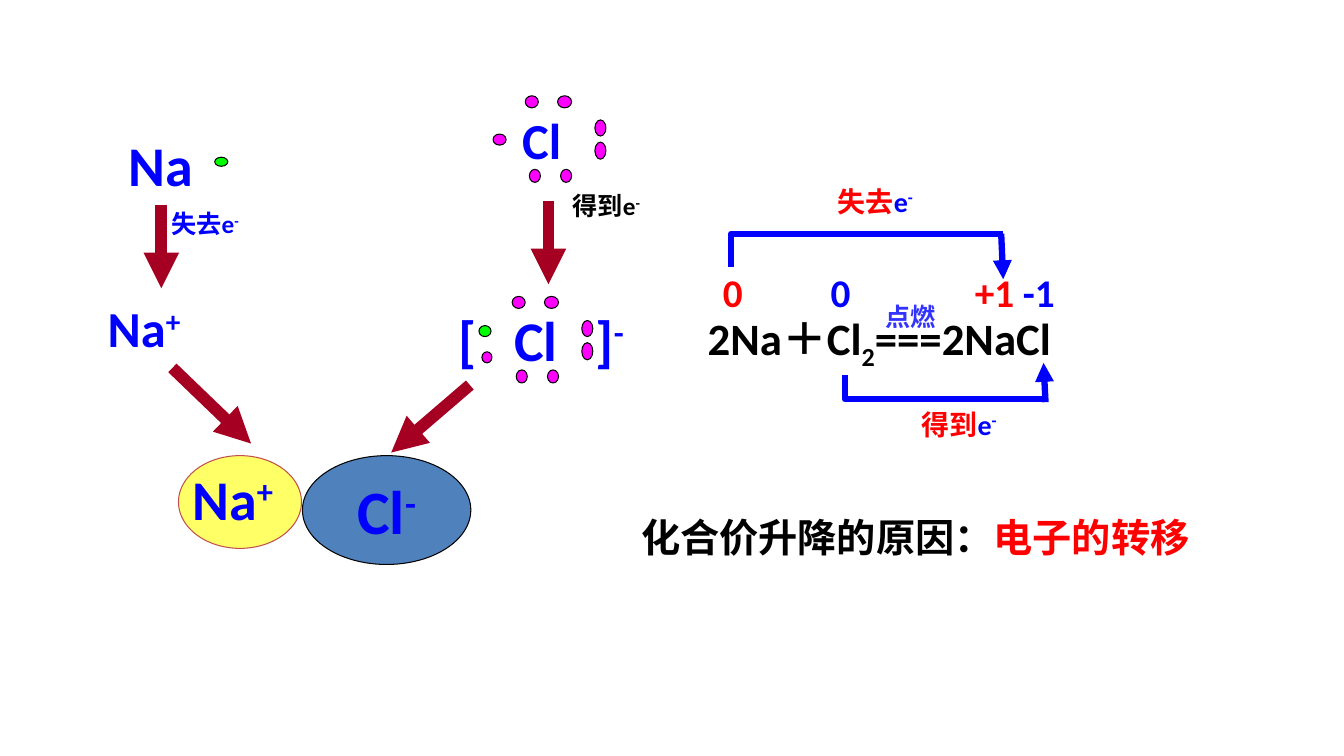
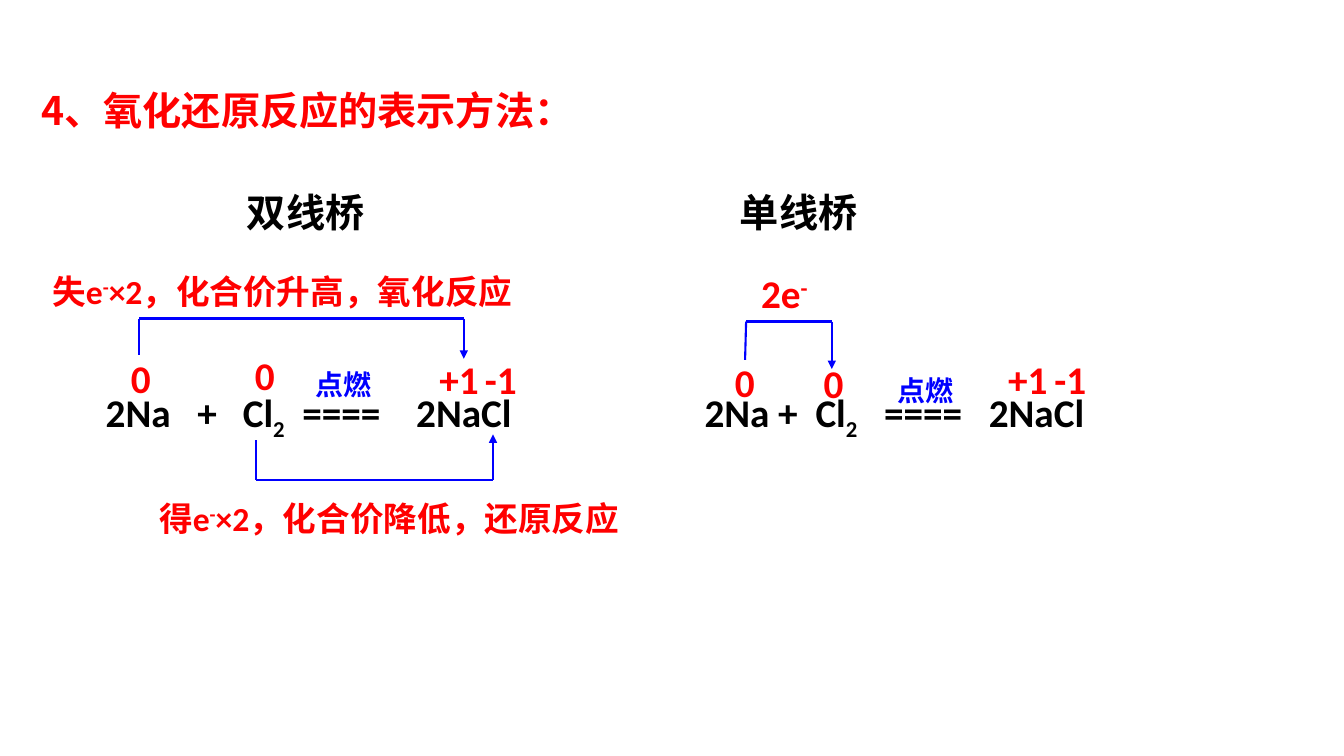
from itertools import pairwise

from lxml import etree
from pptx import Presentation
from pptx.dml.color import RGBColor
from pptx.enum.shapes import MSO_CONNECTOR as Connector, MSO_SHAPE as Shape
from pptx.enum.text import MSO_ANCHOR as Anchor, MSO_AUTO_SIZE as AutoSize, PP_ALIGN as Align
from pptx.oxml.ns import qn
from pptx.util import Pt

PX = 9144
LATIN, HAN = "Calibri", "Noto Sans CJK SC"
RED, BLUE, BLACK = "FF0000", "0000FF", "000000"
MAGENTA, GREEN, CRIMSON = "FF00FF", "00FF00", "A50021"
SUPER, SUB = 30000, -25000
OUTER_ELECTRONS = [
    (0, 0, 13, 12), (32, 0, 14, 12), (69, 24, 11, 16),
    (69, 46, 11, 17), (35, 73, 11, 13), (4, 73, 11, 13),
]


def px(*lengths):
    """Turn pixel lengths into EMU."""
    return [length * PX for length in lengths]


def paint(target, color):
    """Give a fill or a font one solid hex colour."""
    if hasattr(target, "solid"):
        target.solid()
        target.fore_color.rgb = RGBColor.from_string(color)
    else:
        target.color.rgb = RGBColor.from_string(color)


def write(frame, parts, size, color, align=Align.LEFT, font=LATIN):
    """Write bold runs given as text, or as (text, colour, baseline)."""
    paragraph = frame.paragraphs[0]
    paragraph.alignment = align
    for part in [parts] if isinstance(parts, str) else parts:
        wording, tint, baseline = (part, color, 0) if isinstance(part, str) else part
        run = paragraph.add_run()
        run.text = wording
        run.font.size, run.font.bold, run.font.name = Pt(size), True, font
        paint(run.font, tint or color)
        properties = run._r.get_or_add_rPr()
        etree.SubElement(properties, qn("a:ea")).set("typeface", HAN)
        if baseline:
            properties.set("baseline", str(baseline))


def label(slide, x, y, parts, size=28, color=RED):
    """Place a label whose box is wide enough for its text."""
    length = sum(len(part if isinstance(part, str) else part[0]) for part in parts)
    width, height = round(length * size * 1.4) + 20, round(size * 1.7) + 10
    frame = slide.shapes.add_textbox(*px(x, y, width, height)).text_frame
    frame.word_wrap = True
    write(frame, parts, size, color)


def heading(slide, x, y, width, parts, color):
    """Move the title placeholder and fill it."""
    title = slide.shapes.title
    title.left, title.top, title.width, title.height = px(x, y, width, 57)
    frame = title.text_frame
    frame.auto_size, frame.vertical_anchor = AutoSize.NONE, Anchor.TOP
    write(frame, parts, 28, color, font=HAN)


def oval(slide, x, y, width, height, fill, outline=BLACK):
    """Draw a thinly outlined ellipse."""
    ellipse = slide.shapes.add_shape(Shape.OVAL, *px(x, y, width, height))
    ellipse.shadow.inherit = False
    paint(ellipse.fill, fill)
    paint(ellipse.line.fill, outline)
    ellipse.line.width = Pt(0.75)
    return ellipse


def electrons(slide, x, y):
    """Draw the six outer electrons that both chlorine symbols share."""
    for dx, dy, width, height in OUTER_ELECTRONS:
        oval(slide, x + dx, y + dy, width, height, MAGENTA)


def stroke(slide, start, end, color=CRIMSON, width=8.5, head=True):
    """Draw a straight line, with an arrowhead unless told otherwise."""
    connector = slide.shapes.add_connector(Connector.STRAIGHT, *px(*start, *end))
    paint(connector.line.fill, color)
    connector.line.width = Pt(width)
    if head:
        etree.SubElement(connector.line._get_or_add_ln(), qn("a:tailEnd")).set("type", "triangle")
    etree.SubElement(connector._element.spPr, qn("a:effectLst"))


def thin_bridge(slide, *corners):
    """Join the corners by thin lines, the last one an arrow."""
    for start, end in pairwise(corners):
        stroke(slide, start, end, BLUE, 1.5, end == corners[-1])


def thick_bridge(slide, elbow, shaft):
    """Draw a thick open elbow and the arrow that leaves its end."""
    builder = slide.shapes.build_freeform(*elbow[0], scale=PX)
    builder.add_line_segments(elbow[1:], close=False)
    outline = builder.convert_to_shape()
    outline.shadow.inherit = False
    outline.fill.background()
    paint(outline.line.fill, BLUE)
    outline.line.width = Pt(4.5)
    stroke(slide, *shaft, BLUE, 4.5)


def equation(slide, starts):
    """Set the terms of the reaction on one line at the given starts."""
    terms = ["2Na", "+", ["Cl", ("2", None, SUB)], "====", "2NaCl"]
    for x, term in zip(starts, terms):
        label(slide, x, 380, term, color=BLACK)


def charge(sign, color=None):
    """Return a raised charge sign."""
    return (sign, color, SUPER)


def ion_formation(slide):
    """Show sodium and chlorine turning into ions that attract."""
    label(slide, 118, 125, "Na", 40, BLUE)
    oval(slide, 213, 156, 13, 9, GREEN)
    stroke(slide, (160, 203), (160, 286))
    label(slide, 160, 202, ["失去e", charge("-")], 18, BLUE)
    label(slide, 97, 290, ["Na", charge("+")], 36, BLUE)
    stroke(slide, (171, 365), (249, 440))

    label(slide, 508, 103, "Cl", 36, BLUE)
    electrons(slide, 521, 95)
    oval(slide, 489, 133, 13, 11, MAGENTA)
    stroke(slide, (544, 199), (544, 282))
    label(slide, 558, 184, ["得到e", charge("-")], 18, BLACK)
    for x, symbol in [(445, "["), (500, "Cl"), (581, ["]", charge("-")])]:
        label(slide, x, 298, symbol, 40, BLUE)
    electrons(slide, 508, 294)
    oval(slide, 478, 349, 10, 11, MAGENTA)
    oval(slide, 475, 323, 12, 11, GREEN)
    stroke(slide, (466, 382), (388, 449))

    chloride = oval(slide, 300, 452, 167, 108, "4F81BD").text_frame
    chloride.word_wrap, chloride.vertical_anchor = False, Anchor.MIDDLE
    write(chloride, ["Cl", charge("-")], 44, BLUE, Align.CENTER)
    oval(slide, 177, 452, 122, 92, "FFFF66", "C0504D")
    label(slide, 181, 456, ["Na", charge("+")], 40, BLUE)


def valence_change(slide):
    """Show which valences rise and fall in the reaction."""
    for x, y, change in [(821, 178, "失去"), (904, 399, "得到")]:
        label(slide, x, y, [change, ("e", BLUE, 0), charge("-", BLUE)], 20)
    thick_bridge(slide, [(725, 265), (725, 232), (995, 232)], [(993, 232), (995, 277)])
    thick_bridge(slide, [(838, 372), (838, 396), (1037, 396)], [(1037, 399), (1035, 360)])
    label(slide, 707, 261, "0")
    label(slide, 814, 261, "0", color=BLUE)
    label(slide, 957, 261, ["+1 ", ("-1", BLUE, 0)])
    label(slide, 692, 303, ["2Na＋Cl", ("2", None, SUB), "===2NaCl"], 32, BLACK)
    label(slide, 868, 294, "点燃", 18, "3333FF")
    heading(slide, 626, 504, 638, ["化合价升降的原因：", ("电子的转移", RED, 0)], BLACK)


def double_bridge(slide):
    """Show the reaction with two electron bridges."""
    label(slide, 235, 182, "双线桥", color=BLACK)
    equation(slide, [95, 186, 231, 290, 403])
    label(slide, 303, 360, "点燃", 20, BLUE)
    for x, y, valence in [(120, 347, "0"), (243, 344, "0"), (426, 348, "+1"), (471, 348, "-1")]:
        label(slide, x, y, valence)
    thin_bridge(slide, (138, 352), (138, 316), (460, 316), (460, 356))
    thin_bridge(slide, (254, 437), (254, 476), (489, 476), (489, 431))
    label(slide, 42, 264, ["失e", charge("-"), "×2，化合价升高，氧化反应"], 24)
    label(slide, 148, 489, ["得e", charge("-"), "×2，化合价降低，还原反应"], 24)


def single_bridge(slide):
    """Show the reaction with one electron bridge."""
    label(slide, 724, 182, "单线桥", color=BLACK)
    equation(slide, [689, 762, 799, 867, 971])
    label(slide, 880, 366, "点燃", 20, BLUE)
    for x, y, valence in [(719, 351, "0"), (807, 352, "0"), (990, 348, "+1"), (1036, 348, "-1")]:
        label(slide, x, y, valence)
    thin_bridge(slide, (739, 357), (740, 319), (825, 319), (825, 366))
    label(slide, 745, 262, ["2e", charge("-")])


def main():
    """Build both slides and save them."""
    deck = Presentation()
    deck.slide_width, deck.slide_height = px(1333, 750)
    title_only = deck.slide_layouts[5]

    transfer = deck.slides.add_slide(title_only)
    ion_formation(transfer)
    valence_change(transfer)

    notation = deck.slides.add_slide(title_only)
    heading(notation, 31, 81, 544, "4、氧化还原反应的表示方法：", RED)
    double_bridge(notation)
    single_bridge(notation)

    deck.save("out.pptx")


if __name__ == "__main__":
    main()
